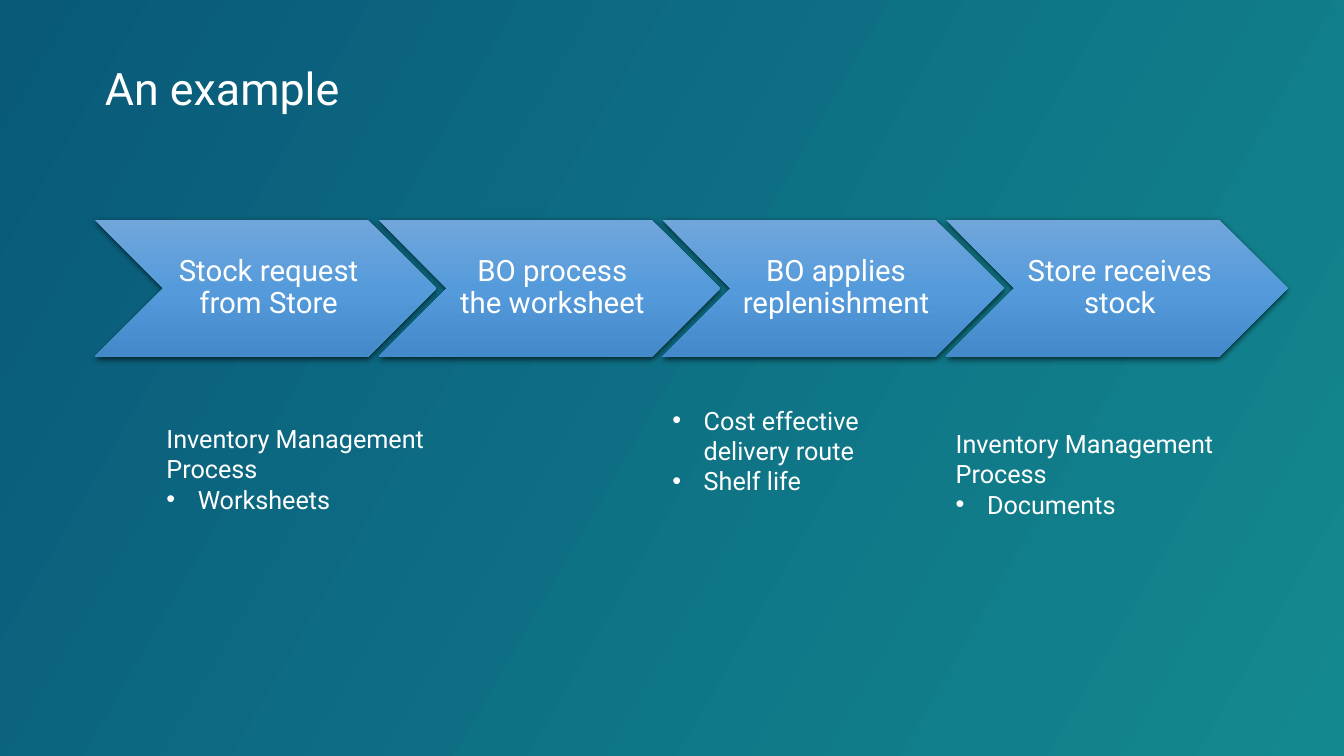
from copy import deepcopy
from dataclasses import dataclass

from lxml import etree
from pptx import Presentation
from pptx.dml.color import RGBColor
from pptx.enum.shapes import MSO_SHAPE
from pptx.enum.text import MSO_ANCHOR, MSO_AUTO_SIZE, PP_ALIGN
from pptx.oxml.ns import qn
from pptx.util import Cm, Pt

CHEVRON = MSO_SHAPE.CHEVRON
LEFT, CENTER = PP_ALIGN.LEFT, PP_ALIGN.CENTER
TOP, MIDDLE = MSO_ANCHOR.TOP, MSO_ANCHOR.MIDDLE
NO_AUTOFIT = MSO_AUTO_SIZE.NONE
COMPARISON_LAYOUT = 4


@dataclass(frozen=True)
class Theme:
    font: str = "Roboto"
    text: str = "FFFFFF"
    shadow: str = "000000"
    background: tuple = ("095979", "138890")
    chevron: tuple = ("71A6DB", "559BDB", "448ACA")
    title_size: int = 32
    step_size: int = 21
    list_size: int = 18


THEME = Theme()
STEPS = (
    "Stock request from Store",
    "BO process the worksheet",
    "BO applies replenishment",
    "Store receives stock",
)
STEP_LEFT, STEP_TOP, STEP_PITCH = 2.39, 5.54, 7.15
STEP_WIDTH, STEP_HEIGHT = 8.61, 3.45
LIST_WIDTH, LIST_HEIGHT = 7.16, 2.57
LIST_INDENT = 0.79
NOTES = (
    (3.94, 10.54, "Inventory Management Process", ("Worksheets",)),
    (16.69, 10.08, "", ("Cost effective delivery route", "Shelf life")),
    (23.83, 10.67, "Inventory Management Process", ("Documents",)),
)


def paint_gradient(fill, element, colors, angle):
    fill.gradient()
    fill.gradient_angle = angle
    stop_list = element.find(".//" + qn("a:gsLst"))
    for _ in colors[2:]:
        stop_list.append(deepcopy(stop_list[-1]))
    for index, (stop, color) in enumerate(zip(fill.gradient_stops, colors)):
        stop.position = index / (len(colors) - 1)
        stop.color.rgb = RGBColor.from_string(color)


def add_soft_shadow(shape):
    shape.shadow.inherit = False
    effects = shape.element.spPr.find(qn("a:effectLst"))
    shadow = etree.SubElement(
        effects, qn("a:outerShdw"), blurRad=str(Pt(4.5)), dist=str(Pt(1.5)),
        dir="5400000", algn="ctr", rotWithShape="0",
    )
    color = etree.SubElement(shadow, qn("a:srgbClr"), val=THEME.shadow)
    etree.SubElement(color, qn("a:alpha"), val="63000")


def place(shape, left, top, width, height):
    shape.left, shape.top = Cm(left), Cm(top)
    shape.width, shape.height = Cm(width), Cm(height)


def format_paragraph(paragraph, size, alignment=LEFT, line_spacing=1.0):
    paragraph.alignment = alignment
    paragraph.line_spacing = line_spacing
    paragraph.space_before = Pt(0)
    font = paragraph.font
    font.name, font.size, font.bold = THEME.font, Pt(size), False
    font.color.rgb = RGBColor.from_string(THEME.text)


def set_bullet(paragraph, bulleted):
    properties = paragraph._p.get_or_add_pPr()
    indent = Cm(LIST_INDENT) if bulleted else 0
    properties.set("marL", str(indent))
    properties.set("indent", str(-indent))
    if bulleted:
        etree.SubElement(properties, qn("a:buFont"), typeface="Arial")
        etree.SubElement(properties, qn("a:buChar"), char="•")
    else:
        etree.SubElement(properties, qn("a:buNone"))


def fill_title(title, text):
    place(title, 2.39, 1.47, 17.02, 1.63)
    frame = title.text_frame
    frame.text = text
    frame.auto_size = NO_AUTOFIT
    frame.vertical_anchor = MIDDLE
    format_paragraph(frame.paragraphs[0], THEME.title_size, line_spacing=0.9)


def add_step(slide, index, text):
    left = STEP_LEFT + index * STEP_PITCH
    shape = slide.shapes.add_shape(
        CHEVRON, Cm(left), Cm(STEP_TOP), Cm(STEP_WIDTH), Cm(STEP_HEIGHT)
    )
    paint_gradient(shape.fill, shape.element, THEME.chevron, 270)
    shape.line.fill.background()
    add_soft_shadow(shape)
    frame = shape.text_frame
    frame.text = text
    frame.word_wrap = True
    frame.vertical_anchor = MIDDLE
    frame.margin_left = Cm(0.23)
    frame.margin_right = frame.margin_top = frame.margin_bottom = Cm(0.08)
    format_paragraph(frame.paragraphs[0], THEME.step_size, CENTER, 0.9)


def fill_note(placeholder, left, top, heading, items):
    place(placeholder, left, top, LIST_WIDTH, LIST_HEIGHT)
    lines = [(heading, False)] if heading else []
    lines += [(item, True) for item in items]
    frame = placeholder.text_frame
    frame.text = "\n".join(text for text, _ in lines)
    frame.word_wrap = True
    frame.auto_size = NO_AUTOFIT
    frame.vertical_anchor = TOP
    for paragraph, (_, bulleted) in zip(frame.paragraphs, lines):
        set_bullet(paragraph, bulleted)
        format_paragraph(paragraph, THEME.list_size)


def main():
    presentation = Presentation()
    presentation.slide_width, presentation.slide_height = Cm(33.87), Cm(19.05)
    layout = presentation.slide_layouts[COMPARISON_LAYOUT]
    slide = presentation.slides.add_slide(layout)
    paint_gradient(slide.background.fill, slide.element, THEME.background, 330)
    title, *bodies = slide.placeholders
    fill_title(title, "An example")
    for index, text in enumerate(STEPS):
        add_step(slide, index, text)
    for body, note in zip(bodies, NOTES):
        fill_note(body, *note)
    for body in bodies[len(NOTES):]:
        body.element.getparent().remove(body.element)
    presentation.save("out.pptx")


if __name__ == "__main__":
    main()
